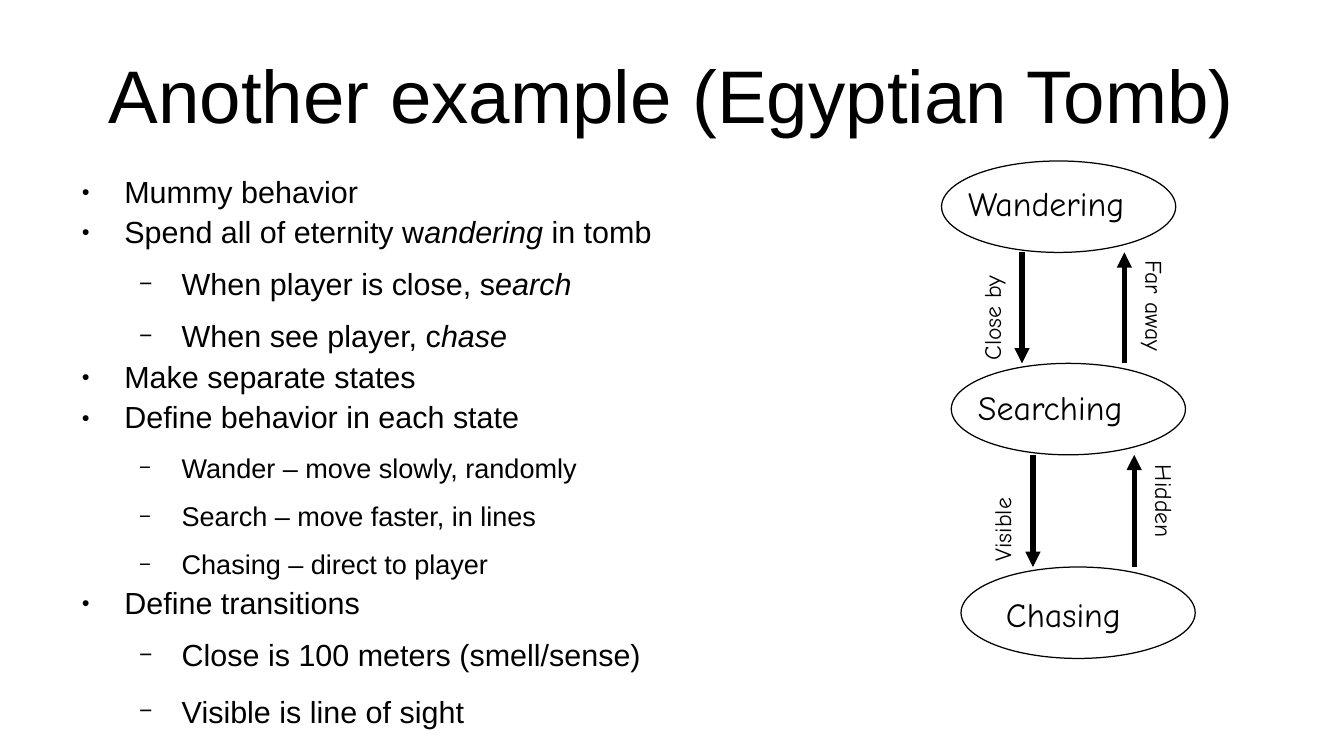
"""Build a slide on the states and transitions of a mummy in an Egyptian tomb."""
from lxml import etree
from pptx import Presentation
from pptx.dml.color import RGBColor
from pptx.enum.shapes import MSO_CONNECTOR, MSO_SHAPE
from pptx.enum.text import MSO_ANCHOR, PP_ALIGN
from pptx.oxml.ns import qn
from pptx.util import Inches, Pt

ELLIPSE = MSO_SHAPE.OVAL
STRAIGHT = MSO_CONNECTOR.STRAIGHT
MIDDLE = MSO_ANCHOR.MIDDLE
CENTER = PP_ALIGN.CENTER
BLACK = "000000"


def color(value):
    return RGBColor.from_string(value)


def add_text_box(left, top, width, height, text="", size=18, font="Arial", margins=(0, 0)):
    box = slide.shapes.add_textbox(Inches(left), Inches(top), Inches(width), Inches(height))
    frame = box.text_frame
    frame.word_wrap = True
    frame.margin_left = frame.margin_right = Inches(margins[0])
    frame.margin_top = frame.margin_bottom = Inches(margins[1])
    paragraph = frame.paragraphs[0]
    paragraph.text = text
    paragraph.font.size = Pt(size)
    paragraph.font.name = font
    paragraph.font.color.rgb = color(BLACK)
    return box


presentation = Presentation()
presentation.slide_width = Inches(11.02)
presentation.slide_height = Inches(6.2)
slide = presentation.slides.add_slide(presentation.slide_layouts[6])

title = add_text_box(0.55, 0.25, 9.92, 1.04, "Another example (Egyptian Tomb)", 44)
title.text_frame.vertical_anchor = MIDDLE
title.text_frame.paragraphs[0].alignment = CENTER

# Each item: level, size, then text pieces that alternate between upright and italic
items = [
    (0, 18, ["Mummy behavior"]),
    (0, 18, ["Spend all of eternity w", "andering ", "in tomb"]),
    (1, 18, ["When player is close, s", "earch"]),
    (1, 18, ["When see player, c", "hase"]),
    (0, 18, ["Make separate states"]),
    (0, 18, ["Define behavior in each state"]),
    (1, 16, ["Wander – move slowly, randomly"]),
    (1, 16, ["Search – move faster, in lines"]),
    (1, 16, ["Chasing – direct to player"]),
    (0, 18, ["Define transitions"]),
    (1, 18, ["Close is 100 meters (smell/sense)"]),
    (1, 18, ["Visible is line of sight"]),
]
bullet_styles = [("●", "45000", 4.5), ("−", "75000", 11.3)]

body = add_text_box(0.55, 1.45, 9.92, 3.6).text_frame
for index, (level, size, pieces) in enumerate(items):
    paragraph = body.add_paragraph() if index else body.paragraphs[0]
    bullet, bullet_size, space_before = bullet_styles[level]
    paragraph.level = level
    paragraph.space_before = Pt(space_before)
    paragraph.line_spacing = 1.0 if index == len(items) - 1 else 0.9
    paragraph.font.size = Pt(size)
    paragraph.font.name = "Arial"
    paragraph.font.color.rgb = color(BLACK)
    for position, piece in enumerate(pieces):
        run = paragraph.add_run()
        run.text = piece
        if position % 2:
            run.font.italic = True
    properties = paragraph._p.get_or_add_pPr()
    properties.set("marL", str(Inches(0.47 * (level + 1))))
    properties.set("indent", str(Inches(-0.35)))
    bullet_parts = [("buSzPct", "val", bullet_size), ("buFont", "typeface", "Arial"),
                    ("buChar", "char", bullet)]
    anchor = properties.find(qn("a:defRPr"))
    for tag, attribute, value in bullet_parts:
        element = etree.Element(qn("a:" + tag))
        element.set(attribute, value)
        if anchor is None:
            properties.append(element)
        else:
            anchor.addprevious(element)

states = [
    ("Wandering", 7.72, 1.32, 7.84, 1.45, 1.69),
    ("Searching", 7.8, 2.98, 7.92, 3.12, 1.58),
    ("Chasing", 7.88, 4.65, 8.15, 4.82, 1.31),
]
for name, left, top, text_left, text_top, text_width in states:
    ellipse = slide.shapes.add_shape(ELLIPSE, Inches(left), Inches(top), Inches(1.92), Inches(0.75))
    ellipse.shadow.inherit = False
    ellipse.fill.background()
    ellipse.line.color.rgb = color(BLACK)
    ellipse.line.width = Pt(0.75)
    add_text_box(text_left, text_top, text_width, 0.44, name, 20, "Comic Neue", (0.1, 0.05))

transitions = [
    ("Close by", 8.38, 2.07, 2.98, 7.62, 2.37, 1.03, 270),
    ("Visible", 8.47, 3.73, 4.65, 7.8, 4.11, 0.84, 270),
    ("Far away", 9.22, 2.98, 2.07, 8.93, 2.4, 1.07, 90),
    ("Hidden", 9.3, 4.65, 3.73, 9.1, 3.99, 0.89, 90),
]
for name, x, start, end, text_left, text_top, text_width, rotation in transitions:
    arrow = slide.shapes.add_connector(STRAIGHT, Inches(x), Inches(start), Inches(x), Inches(end))
    arrow.line.color.rgb = color(BLACK)
    arrow.line.width = Pt(3)
    etree.SubElement(arrow.line._get_or_add_ln(), qn("a:tailEnd")).set("type", "triangle")
    etree.SubElement(arrow._element.spPr, qn("a:effectLst"))
    label = add_text_box(text_left, text_top, text_width, 0.34, name, 14, "Comic Neue", (0.1, 0.05))
    label.rotation = rotation

presentation.save("out.pptx")
